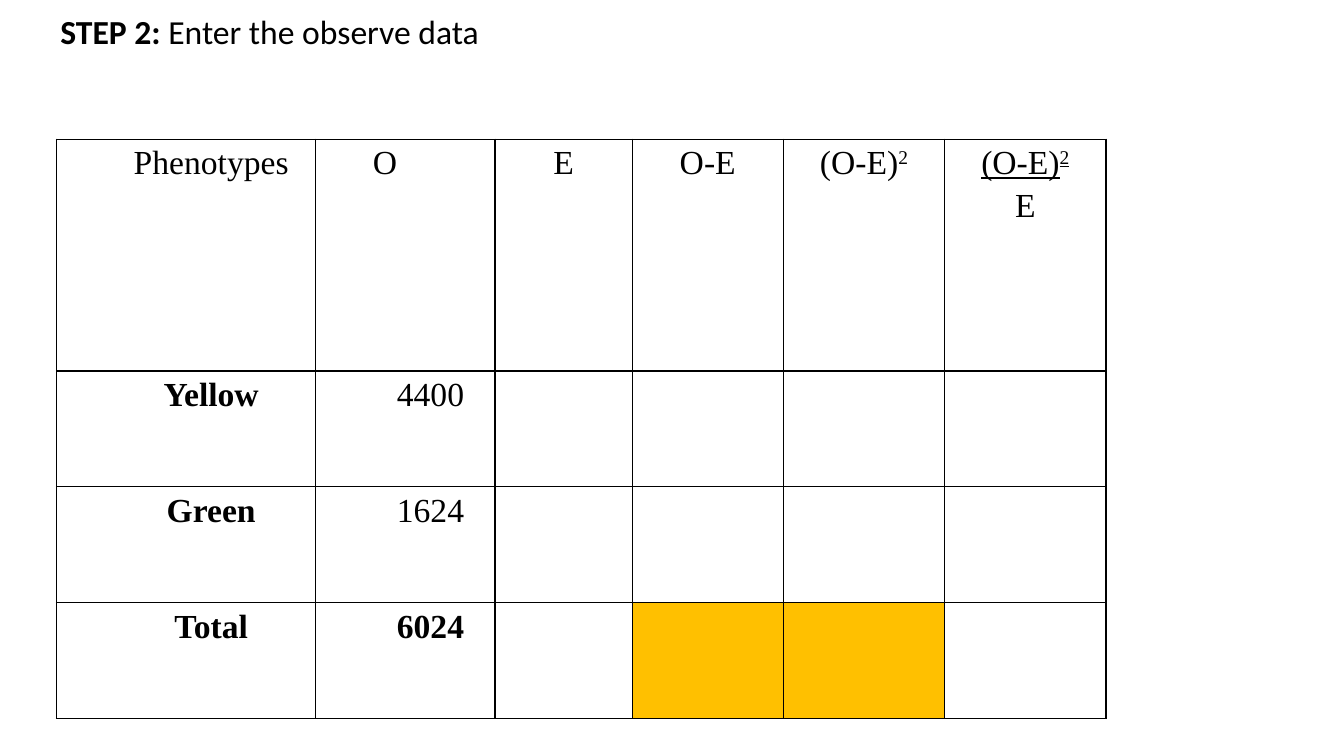
from lxml import etree
from pptx import Presentation
from pptx.dml.color import RGBColor
from pptx.enum import text
from pptx.oxml import ns
from pptx.util import Inches, Pt

COLORS = {"ink": "000000", "paper": "FFFFFF", "blocked": "FFC000"}
CENTER, LEFT, JUSTIFY = text.PP_ALIGN.CENTER, text.PP_ALIGN.LEFT, text.PP_ALIGN.JUSTIFY


def write(paragraph, runs, font_name, align, indent=0, space_after=0):
    """Fill a paragraph with (wording, format) pairs; None marks a line break."""
    layout = {"alignment": align, "line_spacing": 1.15, "space_after": Pt(space_after)}
    for name, value in layout.items():
        setattr(paragraph, name, value)
    properties = paragraph._p.get_or_add_pPr()
    properties.set("marL", str(Inches(indent)))
    properties.set("indent", "0")
    for wording, formats in runs:
        if wording is None:
            paragraph.add_line_break()
            continue
        run = paragraph.add_run()
        run.text = wording
        run.font.color.rgb = RGBColor.from_string(COLORS["ink"])
        settings = {"name": font_name, "size": Pt(24), "bold": False, **formats}
        baseline = settings.pop("baseline", None)
        for name, value in settings.items():
            setattr(run.font, name, value)
        if baseline:
            run.font._element.set("baseline", baseline)


def add_borders(cell):
    """Draw a thin line on all four sides of a cell."""
    properties = cell._tc.get_or_add_tcPr()
    for side in ("lnL", "lnR", "lnT", "lnB"):
        line = etree.SubElement(properties, ns.qn(f"a:{side}"), w=str(Pt(1)))
        fill = etree.SubElement(line, ns.qn("a:solidFill"))
        etree.SubElement(fill, ns.qn("a:srgbClr"), val=COLORS["ink"])


presentation = Presentation()
presentation.slide_width = Inches(13.33)
presentation.slide_height = Inches(7.5)
slide = presentation.slides.add_slide(presentation.slide_layouts[6])

# Heading
heading = slide.shapes.add_textbox(Inches(0), Inches(0), Inches(9.12), Inches(1.11))
heading.text_frame.word_wrap = True
heading.text_frame.auto_size = text.MSO_AUTO_SIZE.SHAPE_TO_FIT_TEXT
write(heading.text_frame.paragraphs[0],
      [("STEP 2: ", {"bold": True}), ("Enter the observe data", {})],
      "Calibri", JUSTIFY, indent=0.5, space_after=8)

# Table contents: runs, alignment and indent of each filled cell
bold, raised, underlined = {"bold": True}, {"baseline": "30000"}, {"underline": True}
rows = [[
    ([("Phenotypes", {})], CENTER, 0.5),
    ([("O", {})], LEFT, 0.5),
    ([("E", {})], CENTER, 0),
    ([("O-E", {})], CENTER, 0),
    ([("(O-E)", {}), ("2", raised)], CENTER, 0),
    ([("(O-E)", underlined), ("2", {**underlined, **raised}), (None, {}), ("E", {})], CENTER, 0),
]]
for phenotype, observed, style in (("Yellow", "4400", {}), ("Green", "1624", {}),
                                   ("Total", "6024", bold)):
    rows.append([([(phenotype, bold)], CENTER, 0.5), ([(observed, style)], CENTER, 0.5)])

# Table grid
column_widths = [2.57, 1.78, 1.36, 1.5, 1.6, 1.6]
row_heights = [2.3, 1.15, 1.15, 1.15]
table = slide.shapes.add_table(len(row_heights), len(column_widths), Inches(0.56), Inches(1.38),
                               Inches(sum(column_widths)), Inches(sum(row_heights))).table
table.first_row = table.horz_banding = False
for column, width in zip(table.columns, column_widths):
    column.width = Inches(width)
for row, height in zip(table.rows, row_heights):
    row.height = Inches(height)

# Cells
margins = {"margin_left": 0.07, "margin_right": 0.07, "margin_top": 0, "margin_bottom": 0}
blocked_cells = {(3, 3), (3, 4)}
for row_index, row in enumerate(table.rows):
    for column_index, cell in enumerate(row.cells):
        for name, value in margins.items():
            setattr(cell, name, Inches(value))
        add_borders(cell)
        color = "blocked" if (row_index, column_index) in blocked_cells else "paper"
        cell.fill.solid()
        cell.fill.fore_color.rgb = RGBColor.from_string(COLORS[color])
        if column_index < len(rows[row_index]):
            runs, align, indent = rows[row_index][column_index]
            write(cell.text_frame.paragraphs[0], runs, "Times New Roman", align, indent)

presentation.save("out.pptx")
